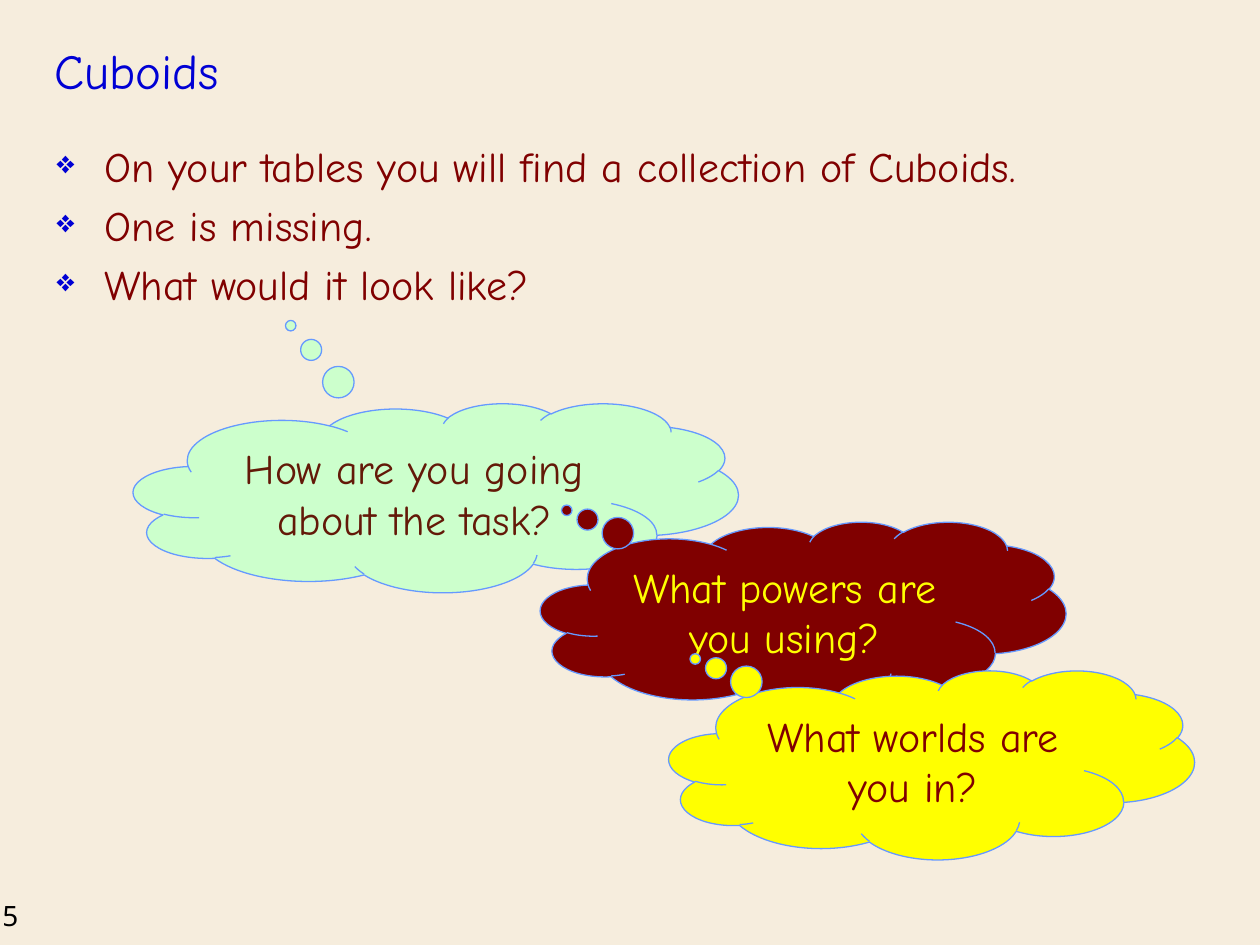
"""Build the Cuboids slide: a title, three bullets and a trail of thought clouds."""

from dataclasses import dataclass

from lxml import etree
from pptx import Presentation
from pptx.dml.color import RGBColor
from pptx.enum.shapes import MSO_SHAPE
from pptx.enum.text import MSO_ANCHOR, MSO_AUTO_SIZE, PP_ALIGN
from pptx.oxml.ns import qn
from pptx.util import Inches, Pt

CLOUD = MSO_SHAPE.CLOUD_CALLOUT
BOTTOM, MIDDLE = MSO_ANCHOR.BOTTOM, MSO_ANCHOR.MIDDLE
NO_AUTOSIZE = MSO_AUTO_SIZE.NONE
LEFT, CENTER = PP_ALIGN.LEFT, PP_ALIGN.CENTER


@dataclass(frozen=True)
class Theme:
    paper: str = "F6EDDD"
    blue: str = "0000D4"
    maroon: str = "800000"
    brown: str = "631908"
    mint: str = "CCFFCC"
    yellow: str = "FFFF00"
    black: str = "000000"
    outline: str = "6699FF"
    font: str = "Comic Neue"
    number_font: str = "Noto Sans"
    title_size: int = 28
    body_size: int = 24
    number_size: int = 16


theme = Theme()
deck = Presentation()
deck.slide_width, deck.slide_height = Inches(10), Inches(7.5)
COLUMN, ROW = deck.slide_width / 100, deck.slide_height / 75


def cells(left, top, width, height):
    """Turn grid columns and rows into slide lengths."""
    return int(left * COLUMN), int(top * ROW), int(width * COLUMN), int(height * ROW)


def style(para, size, color, align=LEFT, font=theme.font):
    """Format every run of a paragraph."""
    para.alignment = align
    for span in para.runs:
        span.font.name, span.font.size = font, Pt(size)
        span.font.color.rgb = RGBColor.from_string(color)


page = deck.slides.add_slide(deck.slide_layouts.get_by_name("Title Only"))
page.background.fill.solid()
page.background.fill.fore_color.rgb = RGBColor.from_string(theme.paper)

number = page.shapes.add_textbox(*cells(-0.8, 70.8, 7.5, 3.7)).text_frame
number.text = "5"
style(number.paragraphs[0], theme.number_size, theme.black, font=theme.number_font)

title = page.shapes.title
title.left, title.top, title.width, title.height = cells(3.3, 1.7, 85, 6.7)
title.text_frame.text = "Cuboids"
title.text_frame.auto_size = NO_AUTOSIZE
title.text_frame.vertical_anchor = BOTTOM
style(title.text_frame.paragraphs[0], theme.title_size, theme.blue)

body = page.shapes.add_textbox(*cells(3.5, 10.7, 92.1, 15.7)).text_frame
body.word_wrap = True
body.text = "\n".join([
    "On your tables you will find a collection of Cuboids.",
    "One is missing.",
    "What would it look like?",
])
for para in body.paragraphs:
    style(para, theme.body_size, theme.maroon)
    para.space_before = Pt(theme.body_size * 0.2)
    properties = para._p.get_or_add_pPr()
    properties.set("marL", str(Inches(0.38)))
    properties.set("indent", str(-Inches(0.38)))
    bullet_color = etree.SubElement(properties, qn("a:buClr"))
    etree.SubElement(bullet_color, qn("a:srgbClr"), val=theme.blue)
    etree.SubElement(properties, qn("a:buSzPct"), val="75000")
    etree.SubElement(properties, qn("a:buChar"), char="❖")

clouds = [
    ("How are you going about the task?", (10.6, 32, 48, 15), (-0.24, -0.91), theme.mint, theme.brown),
    ("What powers are you using?", (42.9, 41.4, 41.7, 15), (-0.45, -0.56), theme.maroon, theme.yellow),
    ("What worlds are you in?", (53.1, 53.2, 41.7, 15), (-0.45, -0.56), theme.yellow, theme.maroon),
]
for question, place, tail, fill, ink in clouds:
    cloud = page.shapes.add_shape(CLOUD, *cells(*place))
    cloud.shadow.inherit = False
    cloud.adjustments[0], cloud.adjustments[1] = tail
    cloud.fill.solid()
    cloud.fill.fore_color.rgb = RGBColor.from_string(fill)
    cloud.line.color.rgb = RGBColor.from_string(theme.outline)
    cloud.line.width = Pt(0.75)
    cloud.text_frame.text = question
    cloud.text_frame.word_wrap = True
    cloud.text_frame.vertical_anchor = MIDDLE
    style(cloud.text_frame.paragraphs[0], theme.body_size, ink, CENTER)

deck.save("out.pptx")
